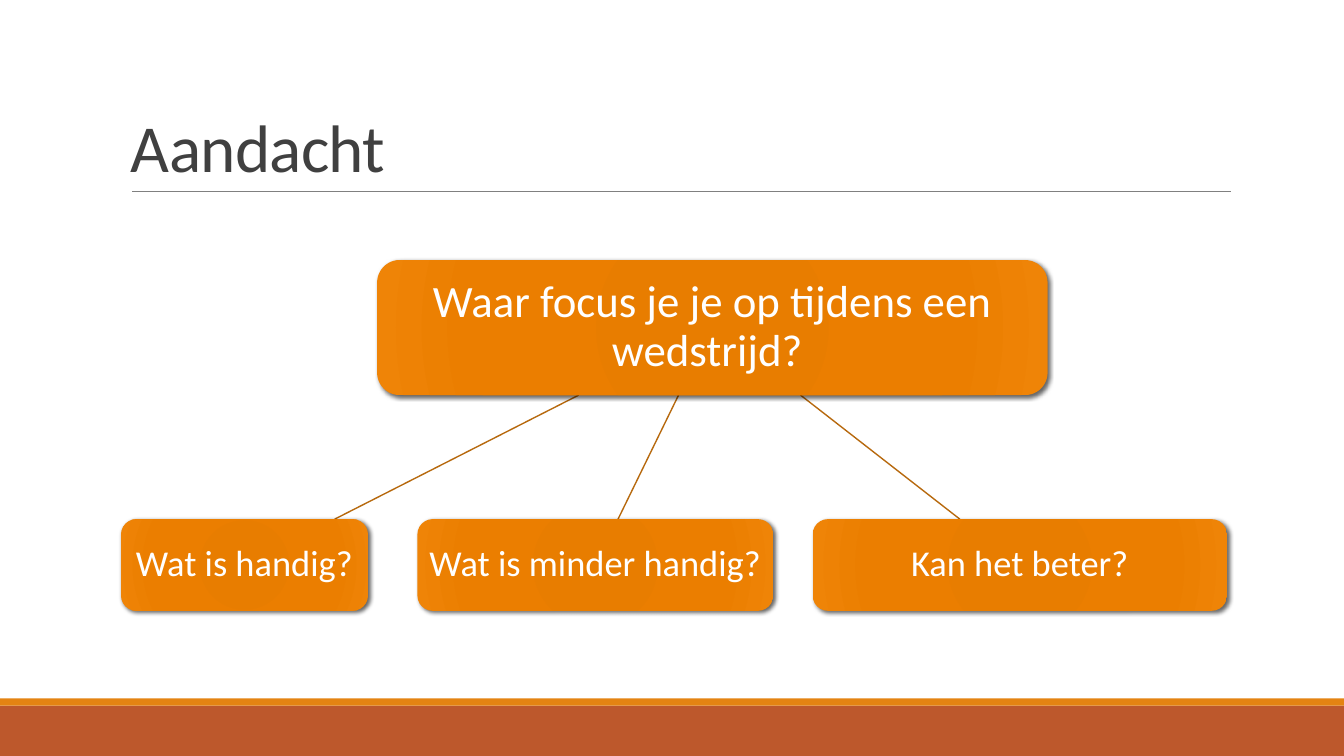
from pptx import Presentation
from pptx.dml.color import RGBColor
from pptx.enum.shapes import MSO_CONNECTOR, MSO_SHAPE
from pptx.enum.text import MSO_ANCHOR, PP_ALIGN
from pptx.oxml import parse_xml
from pptx.util import Inches, Pt

NS = 'xmlns:a="http://schemas.openxmlformats.org/drawingml/2006/main"'
STOPS = [(0, "E57B00"), (34, "E87D00"), (70, "EB7E00"), (100, "EF8407")]
GRADIENT = (
    f'<a:gradFill {NS} rotWithShape="1"><a:gsLst>'
    + "".join(f'<a:gs pos="{pos * 1000}"><a:srgbClr val="{color}"/></a:gs>' for pos, color in STOPS)
    + '</a:gsLst><a:path path="circle"><a:fillToRect l="100000" t="100000" r="100000" b="100000"/>'
    "</a:path></a:gradFill>"
)
SHADOW = (
    f'<a:effectLst {NS}><a:outerShdw blurRad="{Pt(3)}" dist="{Pt(2)}" dir="2700000" algn="ctr" rotWithShape="0">'
    '<a:srgbClr val="000000"><a:alpha val="60000"/></a:srgbClr></a:outerShdw></a:effectLst>'
)


def rgb(color):
    return RGBColor.from_string(color)


def write(tf, text, size, color, spacing, anchor, align=PP_ALIGN.LEFT):
    """Fill a text frame with one formatted paragraph and return its run."""
    tf.word_wrap = True
    tf.vertical_anchor = anchor
    p = tf.paragraphs[0]
    p.alignment = align
    p.line_spacing = spacing
    r = p.add_run()
    r.text = text
    r.font.name = "Calibri"
    r.font.size = Pt(size)
    r.font.color.rgb = rgb(color)
    return r


prs = Presentation()
prs.slide_width = Inches(13.33)
prs.slide_height = Inches(7.5)
s = prs.slides.add_slide(prs.slide_layouts[6])

# Footer bands
for top, height, color in [(7, 0.5, "BD582C"), (6.93, 0.07, "E48312")]:
    sp = s.shapes.add_shape(MSO_SHAPE.RECTANGLE, 0, Inches(top), prs.slide_width, Inches(height))
    sp.shadow.inherit = False
    sp.fill.solid()
    sp.fill.fore_color.rgb = rgb(color)
    sp.line.fill.background()

# Title
title = s.shapes.add_textbox(Inches(1.2), Inches(0.31), Inches(11), Inches(1.59))
r = write(title.text_frame, "Aandacht", 48, "404040", 0.85, MSO_ANCHOR.BOTTOM)
r.font._element.set("spc", "-50")

# Title rule, then the branches from question to answers
lines = [
    (1.31, 1.9, 12.21, 1.9, "808080", 0.5),
    (6.73, 3.92, 6.13, 5.15, "B7690E", 1),
    (5.74, 3.92, 3.32, 5.15, "B7690E", 1),
    (7.94, 3.92, 9.52, 5.15, "B7690E", 1),
]
for x1, y1, x2, y2, color, width in lines:
    line = s.shapes.add_connector(MSO_CONNECTOR.STRAIGHT, Inches(x1), Inches(y1), Inches(x2), Inches(y2))
    line.line.color.rgb = rgb(color)
    line.line.width = Pt(width)
    line._element.spPr.append(parse_xml(f"<a:effectLst {NS}/>"))

# Question and answer boxes
boxes = [
    (3.74, 2.58, 6.65, 1.34, "Waar focus je je op tijdens een wedstrijd? ", 32, 0.09),
    (4.14, 5.15, 3.53, 0.91, "Wat is minder handig? ", 26, 0.07),
    (1.2, 5.15, 2.45, 0.91, "Wat is handig? ", 26, 0.07),
    (8.06, 5.15, 4.11, 0.91, "Kan het beter?", 26, 0.07),
]
for left, top, width, height, text, size, inset in boxes:
    sp = s.shapes.add_shape(MSO_SHAPE.ROUNDED_RECTANGLE, Inches(left), Inches(top), Inches(width), Inches(height))
    sp.line.fill.background()
    spPr = sp._element.spPr
    spPr.insert(2, parse_xml(GRADIENT))
    spPr.append(parse_xml(SHADOW))
    tf = sp.text_frame
    tf.margin_left = tf.margin_right = tf.margin_top = tf.margin_bottom = Inches(inset)
    write(tf, text, size, "FFFFFF", 0.9, MSO_ANCHOR.MIDDLE, PP_ALIGN.CENTER)

prs.save("out.pptx")
